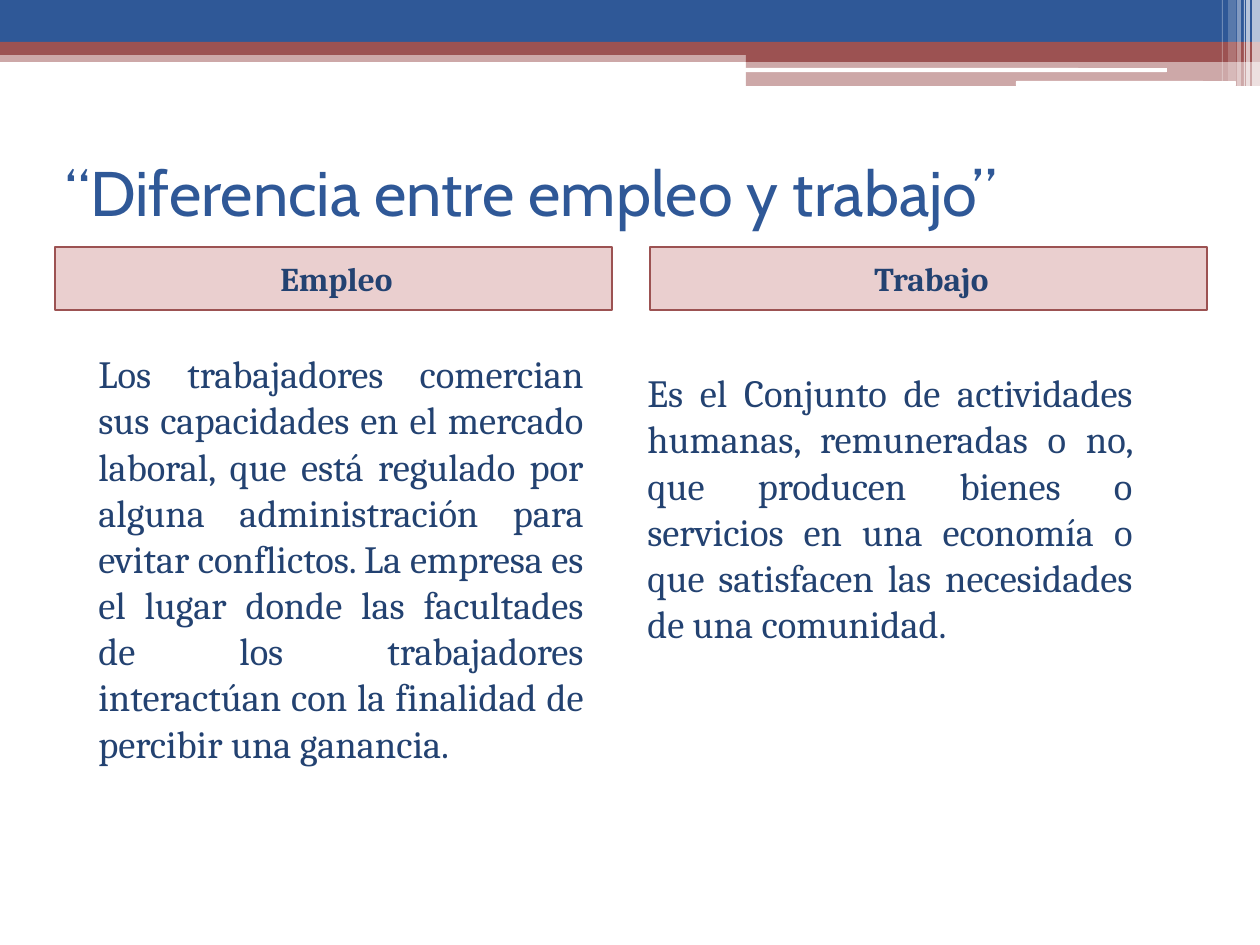
from dataclasses import dataclass

from lxml.etree import SubElement
from pptx import Presentation
from pptx.dml.color import RGBColor
from pptx.enum.shapes import MSO_SHAPE as SHAPE
from pptx.enum.text import MSO_ANCHOR as ANCHOR, PP_ALIGN as ALIGN
from pptx.oxml.ns import qn
from pptx.util import Emu, Pt

SCALE = 914400 / 126


@dataclass(frozen=True)
class Theme:
    blue: str = "2F5897"
    red: str = "9C5252"
    rose: str = "AE4040"
    navy: str = "234271"
    white: str = "FFFFFF"
    title_font: str = "Cabin"
    body_font: str = "Cambria"
    title_size: int = 36
    heading_size: int = 19
    body_size: int = 22


THEME = Theme()

BANDS = [
    (0, 50, 1260, 12, THEME.red, 50),
    (0, 0, 1260, 43, THEME.blue, 100),
    (0, 42, 1260, 13, THEME.red, 100),
    (746, 49, 514, 13, THEME.red, 100),
    (746, 61, 514, 25, THEME.red, 50),
]
SLOTS = [(745, 68, 422, 4), (1016, 81, 220, 5)]
STRIPES = [
    (1252, 8, 86, 65),
    (1246, 4, 86, 65),
    (1244, 1, 86, 60),
    (1237, 4, 86, 40),
    (1228, 8, 81, 20),
    (1222, 1, 81, 30),
]
COLUMNS = [
    ("Empleo", 55, (71, 344, 525, 525),
     "Los trabajadores comercian sus capacidades en el mercado laboral, que está "
     "regulado por alguna administración para evitar conflictos. La empresa es el "
     "lugar donde las facultades de los trabajadores interactúan con la finalidad "
     "de percibir una ganancia."),
    ("Trabajo", 650, (620, 363, 525, 466),
     "Es el Conjunto de actividades humanas, remuneradas o no, que producen bienes "
     "o servicios en una economía o que satisfacen las necesidades de una comunidad."),
]


def px(n):
    return Emu(round(n * SCALE))


def rgb(color):
    return RGBColor.from_string(color)


def add_block(slide, box, color, alpha=100, kind=SHAPE.RECTANGLE, line=None):
    s = slide.shapes.add_shape(kind, *map(px, box))
    s.shadow.inherit = False
    s.fill.solid()
    s.fill.fore_color.rgb = rgb(color)
    if alpha < 100:
        tint = s.fill._xPr.find(qn("a:solidFill"))[0]
        SubElement(tint, qn("a:alpha"), val=str(alpha * 1000))
    if line:
        s.line.color.rgb = rgb(line)
        s.line.width = Pt(1)
    else:
        s.line.fill.background()
    return s


def write(s, text, size, font=THEME.body_font, color=THEME.navy, bold=False,
          align=ALIGN.LEFT, anchor=ANCHOR.TOP, indent=0, before=0):
    tf = s.text_frame
    tf.word_wrap = True
    tf.vertical_anchor = anchor
    p = tf.paragraphs[0]
    p.alignment = align
    p.space_before = Pt(before)
    p._p.get_or_add_pPr().set("marL", str(px(indent)))
    r = p.add_run()
    r.text = text
    r.font.color.rgb = rgb(color)
    for name, value in {"name": font, "size": Pt(size), "bold": bold}.items():
        setattr(r.font, name, value)


def add_text(slide, box, text, size, **style):
    sp = slide.shapes.add_textbox(*map(px, box))
    write(sp, text, size, **style)


def add_header(slide):
    for *box, color, alpha in BANDS:
        add_block(slide, box, color, alpha)
    for box in SLOTS:
        add_block(slide, box, THEME.white, kind=SHAPE.ROUNDED_RECTANGLE)
    for left, width, height, alpha in STRIPES:
        add_block(slide, (left, 0, width, height), THEME.white, alpha)


def add_column(slide, heading, left, body_box, body):
    s = add_block(slide, (left, 247, 557, 63), THEME.rose, 25, line=THEME.red)
    write(s, heading, THEME.heading_size, bold=True, align=ALIGN.CENTER,
          anchor=ANCHOR.MIDDLE, indent=6, before=3)
    add_text(slide, body_box, body, THEME.body_size, align=ALIGN.JUSTIFY,
             indent=15, before=3)


def main():
    prs = Presentation()
    prs.slide_width, prs.slide_height = px(1260), px(945)
    slide = prs.slides.add_slide(prs.slide_layouts[6])
    add_header(slide)
    add_text(slide, (53, 158, 1155, 67), "“Diferencia entre empleo y trabajo”",
             THEME.title_size, font=THEME.title_font, color=THEME.blue,
             anchor=ANCHOR.MIDDLE)
    for column in COLUMNS:
        add_column(slide, *column)
    prs.save("out.pptx")


if __name__ == "__main__":
    main()
